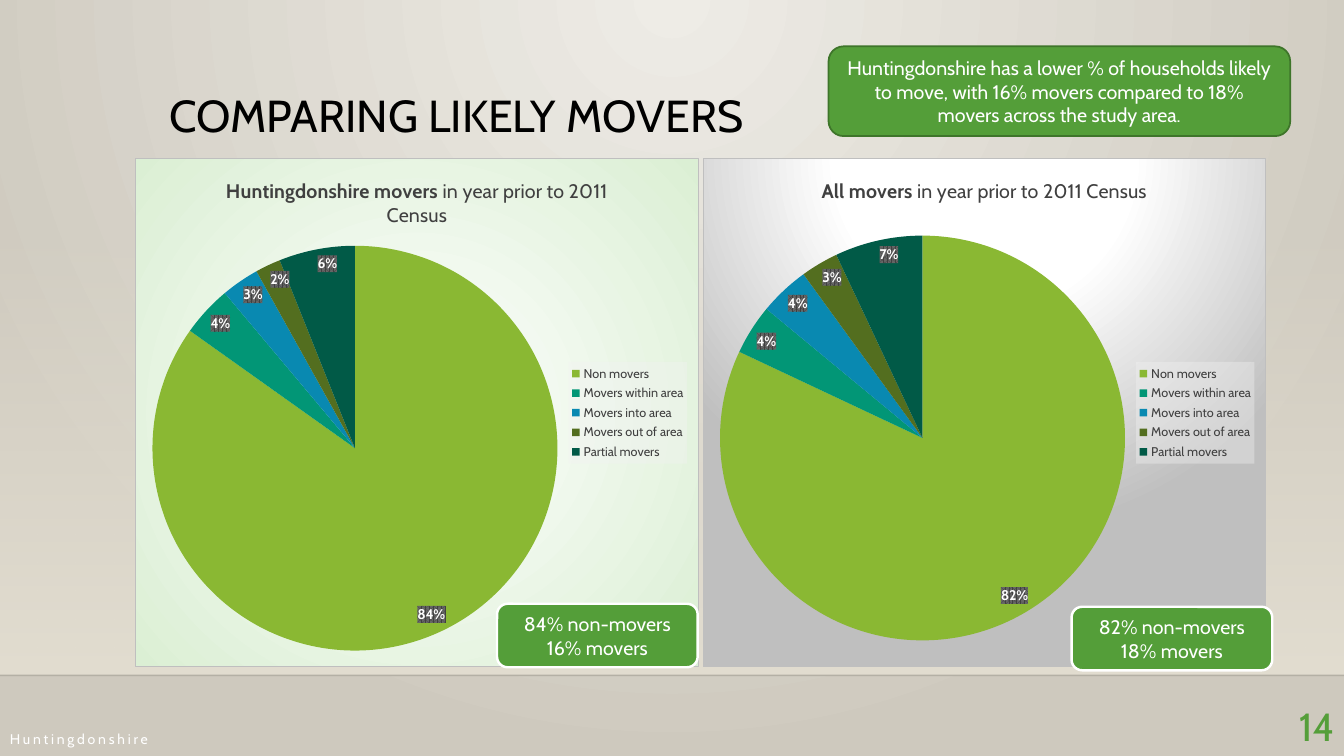
from dataclasses import dataclass
from typing import Optional

from lxml.etree import fromstring
from pptx import Presentation
from pptx.chart.data import CategoryChartData
from pptx.dml.color import RGBColor
from pptx.enum.chart import XL_CHART_TYPE as ChartType
from pptx.enum.chart import XL_LABEL_POSITION as LabelPosition
from pptx.enum.chart import XL_LEGEND_POSITION as LegendPosition
from pptx.enum.shapes import MSO_CONNECTOR as Connector
from pptx.enum.shapes import MSO_SHAPE as Shape
from pptx.enum.text import MSO_ANCHOR as Anchor
from pptx.enum.text import PP_ALIGN as Align
from pptx.oxml.ns import nsdecls, qn
from pptx.util import Inches, Pt

FONT = "Cabin"
GREEN = "549E39"
WHITE = "FFFFFF"
GREY = "404040"
CATEGORIES = ("Non movers", "Movers within area", "Movers into area",
              "Movers out of area", "Partial movers")
SLICES = ("8AB833", "029676", "0989B1", "536E1F", "015A47")


@dataclass(frozen=True)
class Box:
    """Percentages of the slide's width and height."""
    left: float
    top: float
    width: float
    height: float

    def lengths(self) -> tuple[int, int, int, int]:
        return (across(self.left), down(self.top),
                across(self.width), down(self.height))


@dataclass(frozen=True)
class Label:
    box: Box
    lines: tuple[str, ...]
    size: float
    color: str
    align: Align = Align.LEFT
    anchor: Anchor = Anchor.TOP
    line_spacing: Optional[float] = None
    letter_spacing: float = 0


@dataclass(frozen=True)
class Callout:
    label: Label
    outline: str
    outline_width: float


@dataclass(frozen=True)
class MoverPie:
    left: float
    area: str
    values: tuple[float, ...]
    fill: str
    plot_top: float


presentation = Presentation()
presentation.slide_width = Inches(13.33)
presentation.slide_height = Inches(7.5)
slide = presentation.slides.add_slide(presentation.slide_layouts[6])


def across(percent: float) -> int:
    return round(presentation.slide_width * percent / 100)


def down(percent: float) -> int:
    return round(presentation.slide_height * percent / 100)


def rgb(color: str) -> RGBColor:
    return RGBColor.from_string(color)


def color_xml(color: str, alpha: int = 100) -> str:
    return f'<a:srgbClr val="{color}"><a:alpha val="{alpha * 1000}"/></a:srgbClr>'


def solid_xml(color: str, alpha: int) -> str:
    return f'<a:solidFill {nsdecls("a")}>{color_xml(color, alpha)}</a:solidFill>'


def gradient_xml(stops: tuple, direction: str) -> str:
    marks = "".join(f'<a:gs pos="{position * 1000}">{color_xml(*color)}</a:gs>'
                    for position, *color in stops)
    return (f'<a:gradFill {nsdecls("a")} rotWithShape="1">'
            f'<a:gsLst>{marks}</a:gsLst>{direction}</a:gradFill>')


def circle_xml(left: int, top: int, right: int, bottom: int) -> str:
    return (f'<a:path path="circle"><a:fillToRect l="{left * 1000}" t="{top * 1000}" '
            f'r="{right * 1000}" b="{bottom * 1000}"/></a:path>')


def swap_fill(element, fill: str) -> None:
    solid = element.find(".//" + qn("a:solidFill"))
    solid.getparent().replace(solid, fromstring(fill))


def style_chart_part(part, fill: str, line: str = "") -> None:
    properties = fromstring(f'<c:spPr {nsdecls("c", "a")}>{fill}{line}</c:spPr>')
    part.find(qn("c:txPr")).addprevious(properties)


def place_chart_part(part, index: int, target: str, frame: tuple) -> None:
    for layout in part.findall(qn("c:layout")):
        part.remove(layout)
    inner = f'<c:layoutTarget val="{target}"/>' if target else ""
    modes = "".join(f'<c:{axis}Mode val="edge"/>' for axis in "xy")
    sizes = "".join(f'<c:{name} val="{value}"/>' for name, value in zip("xywh", frame))
    part.insert(index, fromstring(
        f'<c:layout {nsdecls("c")}><c:manualLayout>{inner}{modes}{sizes}'
        '</c:manualLayout></c:layout>'))


def write_label(shape, label: Label) -> None:
    frame = shape.text_frame
    frame.word_wrap = True
    frame.vertical_anchor = label.anchor
    frame.text = "\n".join(label.lines)
    for paragraph in frame.paragraphs:
        paragraph.alignment = label.align
        paragraph.line_spacing = label.line_spacing
        paragraph.font.name = FONT
        paragraph.font.size = Pt(label.size)
        paragraph.font.color.rgb = rgb(label.color)
        if label.letter_spacing:
            for run in paragraph.runs:
                run.font._element.set("spc", str(round(label.letter_spacing * 100)))


def add_label(label: Label) -> None:
    write_label(slide.shapes.add_textbox(*label.box.lengths()), label)


def add_callout(callout: Callout) -> None:
    shape = slide.shapes.add_shape(Shape.ROUNDED_RECTANGLE, *callout.label.box.lengths())
    shape.shadow.inherit = False
    shape.fill.solid()
    shape.fill.fore_color.rgb = rgb(GREEN)
    shape.line.color.rgb = rgb(callout.outline)
    shape.line.width = Pt(callout.outline_width)
    write_label(shape, callout.label)


def add_backdrop() -> None:
    slide.background.fill.solid()
    slide.background.fill.fore_color.rgb = rgb(WHITE)
    swap_fill(slide.element, gradient_xml(
        ((0, "EEECE6"), (100, "CEC9BE")), circle_xml(43, 0, 43, 100)))

    wall = slide.shapes.add_shape(Shape.RECTANGLE, *Box(0, 29.47, 100, 59.87).lengths())
    wall.shadow.inherit = False
    wall.line.fill.background()
    wall.fill.solid()
    swap_fill(wall.element, gradient_xml(
        ((0, "E3DED1", 0), (100, "E3DED1")), '<a:lin ang="5400000" scaled="0"/>'))

    floor_edge = slide.shapes.add_connector(
        Connector.STRAIGHT, 0, down(89.33), across(100), down(89.33))
    floor_edge.line.width = Pt(1)
    floor_edge.line.color.rgb = rgb("000001")
    swap_fill(floor_edge.element, solid_xml("000001", 20))
    floor_edge.element.spPr.append(fromstring(f'<a:effectLst {nsdecls("a")}/>'))


def add_pie(pie: MoverPie) -> None:
    data = CategoryChartData(number_format="0%")
    data.categories = CATEGORIES
    data.add_series("Series 1", pie.values)
    box = Box(pie.left, 20.93, 41.93, 67.33)
    chart = slide.shapes.add_chart(ChartType.PIE, *box.lengths(), data).chart
    chart.font.name = FONT
    chart.font.size = Pt(10)
    chart.font.color.rgb = rgb("000000")
    space = chart.element if hasattr(chart, "element") else chart._chartSpace
    border = f'<a:ln w="9525">{solid_xml("BFBFBF", 100)}</a:ln>'
    style_chart_part(space, pie.fill, border)

    chart.has_title = True
    heading = chart.chart_title.text_frame.paragraphs[0]
    heading.font.name = FONT
    heading.font.size = Pt(14)
    heading.font.color.rgb = rgb(GREY)
    for text, bold in ((f"{pie.area} movers", True), (" in year prior to 2011 Census", False)):
        run = heading.add_run()
        run.text = text
        run.font.bold = bold

    plot = chart.plots[0]
    plot.vary_by_categories = True
    for index, color in enumerate(SLICES):
        fill = plot.series[0].points[index].format.fill
        fill.solid()
        fill.fore_color.rgb = rgb(color)
    plot.has_data_labels = True
    labels = plot.data_labels
    labels.show_value = True
    labels.number_format = "0%"
    labels.number_format_is_linked = False
    labels.position = LabelPosition.INSIDE_END
    labels.font.name = FONT
    labels.font.size = Pt(10)
    labels.font.bold = True
    labels.font.color.rgb = rgb(WHITE)
    style_chart_part(space.find(".//" + qn("c:dLbls")), (
        f'<a:pattFill prst="pct75"><a:fgClr>{color_xml(GREY)}</a:fgClr>'
        f'<a:bgClr>{color_xml("666666")}</a:bgClr></a:pattFill>'))

    chart.has_legend = True
    chart.legend.position = LegendPosition.RIGHT
    chart.legend.include_in_layout = False
    chart.legend.font.name = FONT
    chart.legend.font.size = Pt(9)
    chart.legend.font.color.rgb = rgb(GREY)
    legend = space.find(".//" + qn("c:legend"))
    style_chart_part(legend, solid_xml("F2F2F2", 39))
    place_chart_part(legend, 1, "", (0.77, 0.4, 0.21, 0.2))
    place_chart_part(space.find(".//" + qn("c:plotArea")), 0, "inner",
                     (0.03, pie.plot_top, 0.72, 0.8))


def badge(left: float, top: float, stayed: int) -> Callout:
    lines = (f"{stayed}% non-movers", f"{100 - stayed}% movers")
    return Callout(Label(Box(left, top, 14.93, 8.4), lines, 14, WHITE,
                         Align.CENTER, Anchor.MIDDLE), WHITE, 1.75)


LABELS = (
    Label(Box(11.85, 11.73, 78.83, 15.47), ("COMPARING LIKELY MOVERS",), 32, "000000",
          line_spacing=0.9),
    Label(Box(0, 95.47, 40.8, 4.53), ("Huntingdonshire",), 10, WHITE,
          anchor=Anchor.MIDDLE, letter_spacing=2),
    Label(Box(93.37, 92.27, 6.67, 7.33), ("14",), 28, GREEN, Align.RIGHT),
)
PIES = (
    MoverPie(52.28, "All", (0.82, 0.04, 0.04, 0.03, 0.07), gradient_xml(
        ((0, WHITE), (39, WHITE), (100, "BFBFBF")), circle_xml(50, -80, 50, 180)), 0.15),
    MoverPie(10.05, "Huntingdonshire", (0.84, 0.04, 0.03, 0.02, 0.06), gradient_xml(
        ((0, WHITE), (100, "DBEFD4")), circle_xml(50, 50, 50, 50)), 0.17),
)
CALLOUTS = (
    Callout(Label(Box(61.65, 6.13, 34.35, 11.87), (
        "Huntingdonshire has a lower % of households likely to move, with 16% movers "
        "compared to 18% movers across the study area.",), 14, WHITE,
        Align.CENTER, Anchor.MIDDLE), "3E752A", 1.25),
    badge(79.73, 80.27, 82),
    badge(36.98, 79.87, 84),
)


def main() -> None:
    add_backdrop()
    for label in LABELS:
        add_label(label)
    for pie in PIES:
        add_pie(pie)
    for callout in CALLOUTS:
        add_callout(callout)
    presentation.save("out.pptx")


if __name__ == "__main__":
    main()
